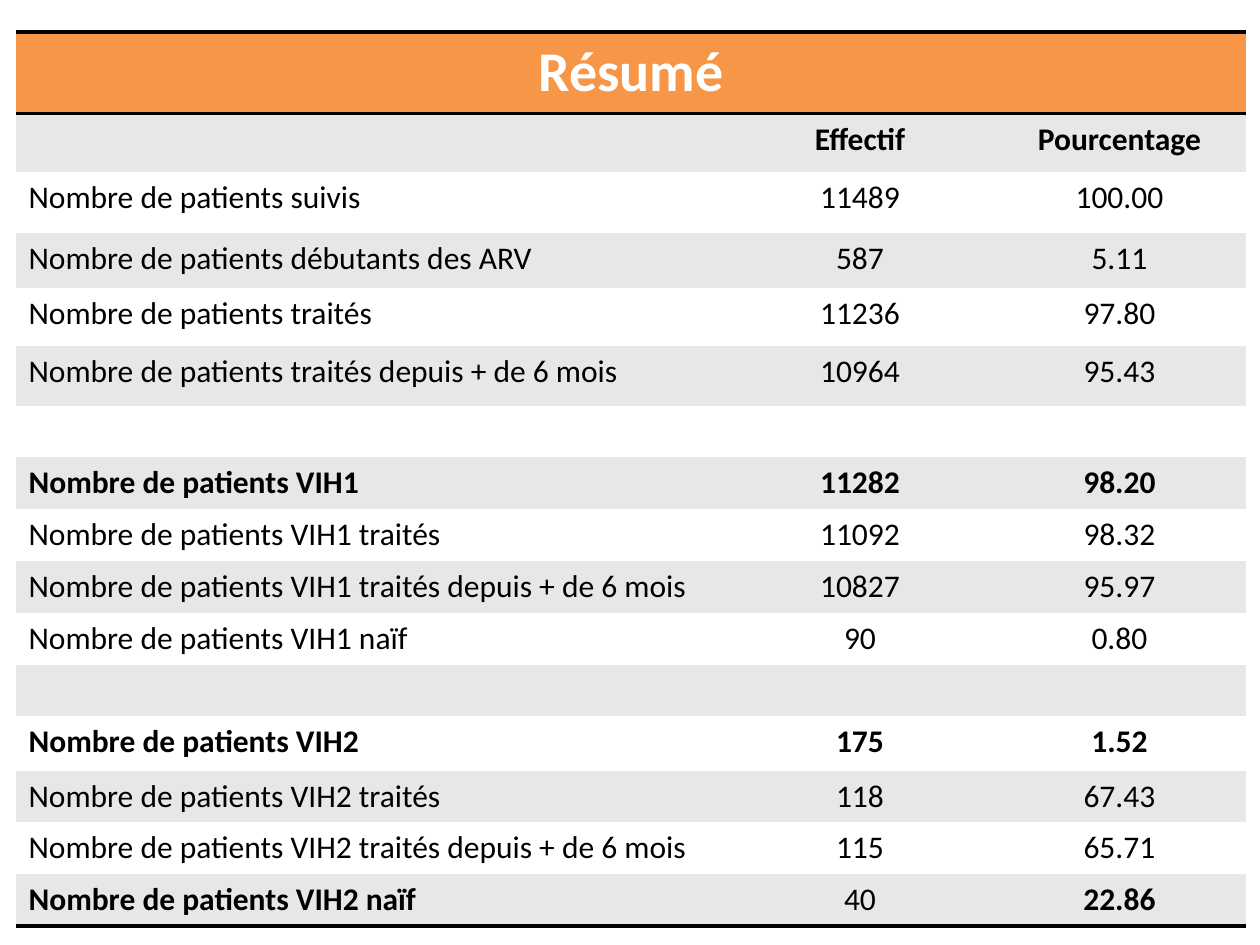
from lxml.etree import SubElement
from pptx import Presentation
from pptx.dml.color import RGBColor
from pptx.enum.text import PP_ALIGN as Align
from pptx.oxml.ns import qn
from pptx.util import Pt

PX = 914400 // 126
ORANGE = RGBColor(0xF7, 0x96, 0x46)
GREY = RGBColor(0xE7, 0xE7, 0xE7)
WHITE = RGBColor(0xFF, 0xFF, 0xFF)
BLACK = RGBColor(0, 0, 0)
NO_STYLE = "{2D5ABB26-0587-4C30-8999-92F81FD0307C}"

LEFT, TOP = 16, 32
COLUMN_WIDTHS = [711, 266, 253]
# Row height, cell texts, columns in bold
ROWS = [
    (82, ["Résumé", "", ""], [0]),
    (58, ["", "Effectif", "Pourcentage"], [1, 2]),
    (61, ["Nombre de patients suivis", "11489", "100.00"], []),
    (55, ["Nombre de patients débutants des ARV", "587", "5.11"], []),
    (58, ["Nombre de patients traités", "11236", "97.80"], []),
    (60, ["Nombre de patients traités depuis + de 6 mois", "10964", "95.43"], []),
    (51, ["", "", ""], []),
    (52, ["Nombre de patients VIH1", "11282", "98.20"], [0, 1, 2]),
    (52, ["Nombre de patients VIH1 traités", "11092", "98.32"], []),
    (52, ["Nombre de patients VIH1 traités depuis + de 6 mois", "10827", "95.97"], []),
    (52, ["Nombre de patients VIH1 naïf", "90", "0.80"], []),
    (51, ["", "", ""], []),
    (55, ["Nombre de patients VIH2", "175", "1.52"], [0, 1, 2]),
    (51, ["Nombre de patients VIH2 traités", "118", "67.43"], []),
    (52, ["Nombre de patients VIH2 traités depuis + de 6 mois", "115", "65.71"], []),
    (52, ["Nombre de patients VIH2 naïf", "40", "22.86"], [0, 2]),
]
LAST = len(ROWS) - 1


def add_border(cell, side, position):
    """Draw a 2 pt black rule on one side; borders must precede the fill."""
    properties = cell._tc.get_or_add_tcPr()
    line = SubElement(properties, qn(f"a:{side}"), w=str(Pt(2)))
    fill = SubElement(line, qn("a:solidFill"))
    SubElement(fill, qn("a:srgbClr"), val=str(BLACK))
    properties.insert(position, line)


presentation = Presentation()
presentation.slide_width = 1260 * PX
presentation.slide_height = 945 * PX
slide = presentation.slides.add_slide(presentation.slide_layouts[6])

# Table frame, without style or banding
heights = [height for height, _, _ in ROWS]
table = slide.shapes.add_table(
    len(ROWS), len(COLUMN_WIDTHS), LEFT * PX, TOP * PX,
    sum(COLUMN_WIDTHS) * PX, sum(heights) * PX).table
table.first_row = table.horz_banding = False
table._tbl.tblPr.find(qn("a:tableStyleId")).text = NO_STYLE
for column, width in zip(table.columns, COLUMN_WIDTHS):
    column.width = width * PX
table.cell(0, 0).merge(table.cell(0, 2))

# Cells: orange title row, then alternating grey and white
for row_index, (height, texts, bold_columns) in enumerate(ROWS):
    table.rows[row_index].height = height * PX
    is_title = row_index == 0
    for column_index, text in enumerate(texts):
        cell = table.cell(row_index, column_index)
        cell.fill.solid()
        cell.fill.fore_color.rgb = ORANGE if is_title else GREY if row_index % 2 else WHITE
        if is_title:
            add_border(cell, "lnT", 0)
            add_border(cell, "lnB", 1)
        elif row_index == LAST:
            add_border(cell, "lnB", 0)
        if not text:
            continue
        paragraph = cell.text_frame.paragraphs[0]
        paragraph.alignment = Align.CENTER if is_title or column_index else Align.LEFT
        run = paragraph.add_run()
        run.text = text
        font_format = {
            "name": "Calibri",
            "size": Pt(32 if is_title else 18),
            "bold": column_index in bold_columns,
        }
        for attribute, value in font_format.items():
            setattr(run.font, attribute, value)
        run.font.color.rgb = WHITE if is_title else BLACK

presentation.save("out.pptx")
